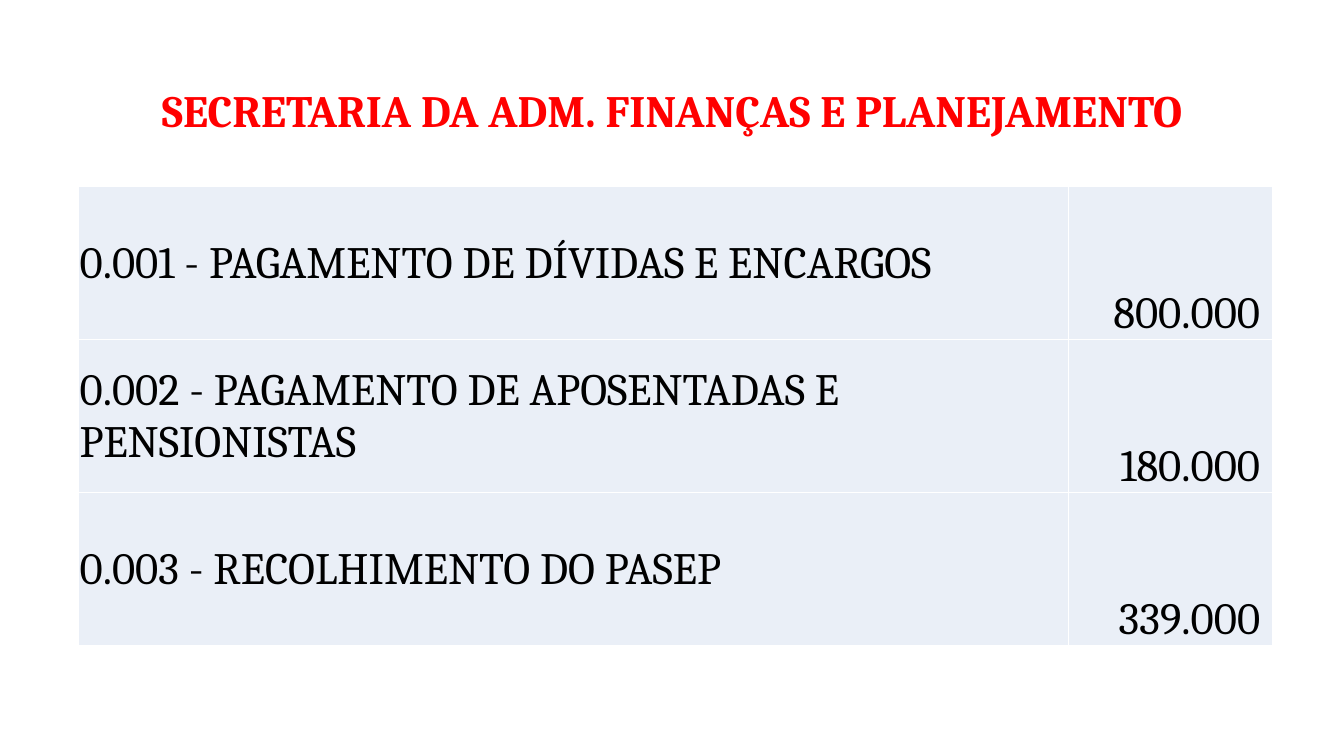
from lxml.etree import SubElement
from pptx import Presentation
from pptx.dml.color import RGBColor
from pptx.enum.text import MSO_ANCHOR, PP_ALIGN
from pptx.oxml.ns import qn
from pptx.util import Inches, Pt

TITLE = "SECRETARIA DA ADM. FINANÇAS E PLANEJAMENTO"
EXPENSES = [
    ("0.001 - PAGAMENTO DE DÍVIDAS E ENCARGOS", "800.000"),
    ("0.002 - PAGAMENTO DE APOSENTADAS E PENSIONISTAS", "180.000"),
    ("0.003 - RECOLHIMENTO DO PASEP", "339.000"),
]

RED = RGBColor(0xFF, 0x00, 0x00)
BLACK = RGBColor(0x00, 0x00, 0x00)
WHITE = RGBColor(0xFF, 0xFF, 0xFF)
PALE_BLUE = RGBColor(0xEA, 0xEF, 0xF7)

SLIDE_SIZE = (13.33, 7.5)
TITLE_BOX = (0.92, 0.4, 11.5, 1.45)
TABLE_LEFT, TABLE_TOP = 0.78, 1.85
COLUMN_WIDTHS = (9.82, 2.02)
ROW_HEIGHT = 1.52
COLUMN_FORMATS = [
    {"align": PP_ALIGN.LEFT, "anchor": MSO_ANCHOR.MIDDLE, "right": 0.01},
    {"align": PP_ALIGN.RIGHT, "anchor": MSO_ANCHOR.BOTTOM, "right": 0.12},
]


def write(paragraph, text, align, color, bold=False):
    paragraph.alignment = align
    run = paragraph.add_run()
    run.text = text
    font_format = {"name": "Cambria", "size": Pt(32), "bold": bold}
    for attribute, value in font_format.items():
        setattr(run.font, attribute, value)
    run.font.color.rgb = color


def add_borders(cell):
    """Draw a 1 pt white line on each side; call before filling the cell."""
    properties = cell._tc.get_or_add_tcPr()
    for side in ("lnL", "lnR", "lnT", "lnB"):
        line = SubElement(properties, qn(f"a:{side}"), w=str(Pt(1)))
        line_fill = SubElement(line, qn("a:solidFill"))
        SubElement(line_fill, qn("a:srgbClr"), val=str(WHITE))


def add_title(slide):
    frame = slide.shapes.add_textbox(*map(Inches, TITLE_BOX)).text_frame
    frame.word_wrap = True
    frame.vertical_anchor = MSO_ANCHOR.MIDDLE
    heading = frame.paragraphs[0]
    heading.line_spacing = 0.9
    write(heading, TITLE, PP_ALIGN.CENTER, RED, bold=True)


def add_expenses(slide):
    table = slide.shapes.add_table(
        len(EXPENSES), len(COLUMN_WIDTHS),
        Inches(TABLE_LEFT), Inches(TABLE_TOP),
        Inches(sum(COLUMN_WIDTHS)), Inches(ROW_HEIGHT * len(EXPENSES)),
    ).table
    table.first_row = False
    table.horz_banding = False
    for column, width in zip(table.columns, COLUMN_WIDTHS):
        column.width = Inches(width)
    for row, expense in zip(table.rows, EXPENSES):
        row.height = Inches(ROW_HEIGHT)
        for cell, text, layout in zip(row.cells, expense, COLUMN_FORMATS):
            add_borders(cell)
            cell.fill.solid()
            cell.fill.fore_color.rgb = PALE_BLUE
            cell_format = {
                "margin_left": Inches(0.01),
                "margin_right": Inches(layout["right"]),
                "margin_top": Inches(0.01),
                "margin_bottom": 0,
                "vertical_anchor": layout["anchor"],
            }
            for attribute, value in cell_format.items():
                setattr(cell, attribute, value)
            write(cell.text_frame.paragraphs[0], text, layout["align"], BLACK)


def main():
    deck = Presentation()
    deck.slide_width, deck.slide_height = map(Inches, SLIDE_SIZE)
    slide = deck.slides.add_slide(deck.slide_layouts[6])
    add_title(slide)
    add_expenses(slide)
    deck.save("out.pptx")


if __name__ == "__main__":
    main()
